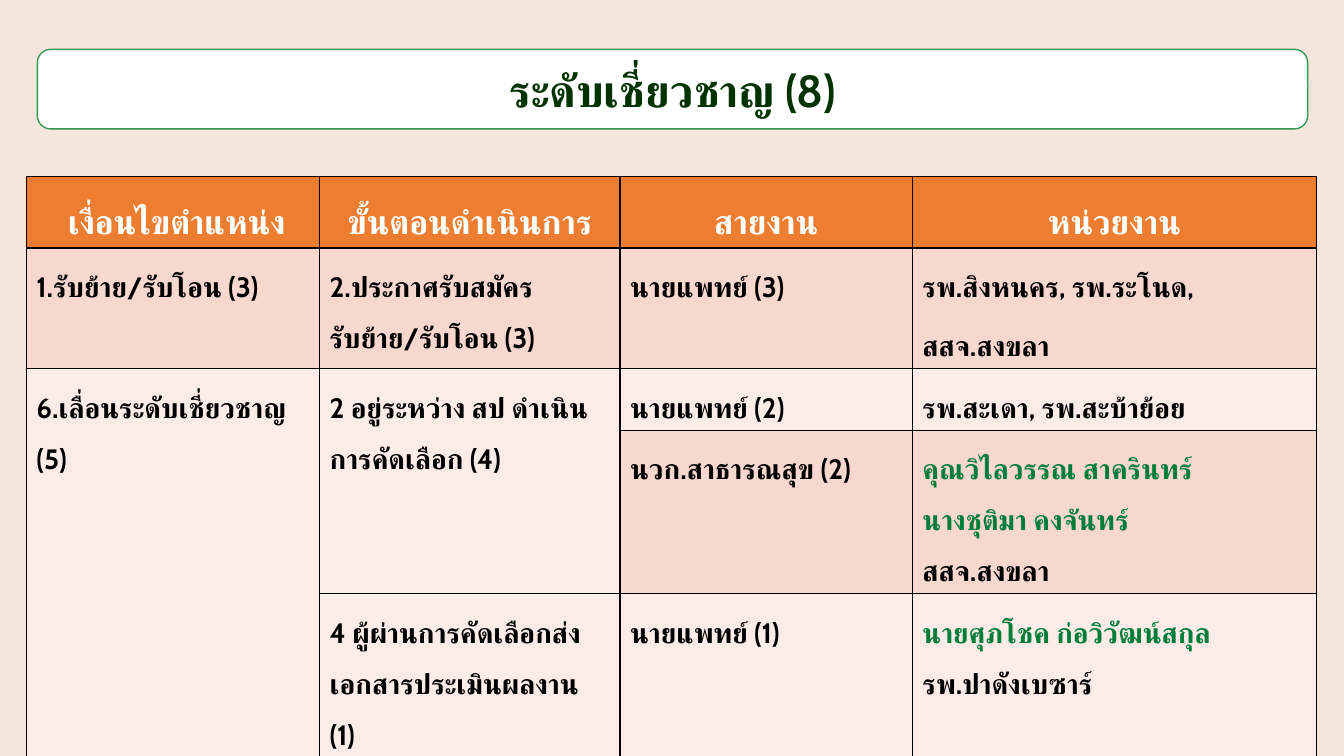
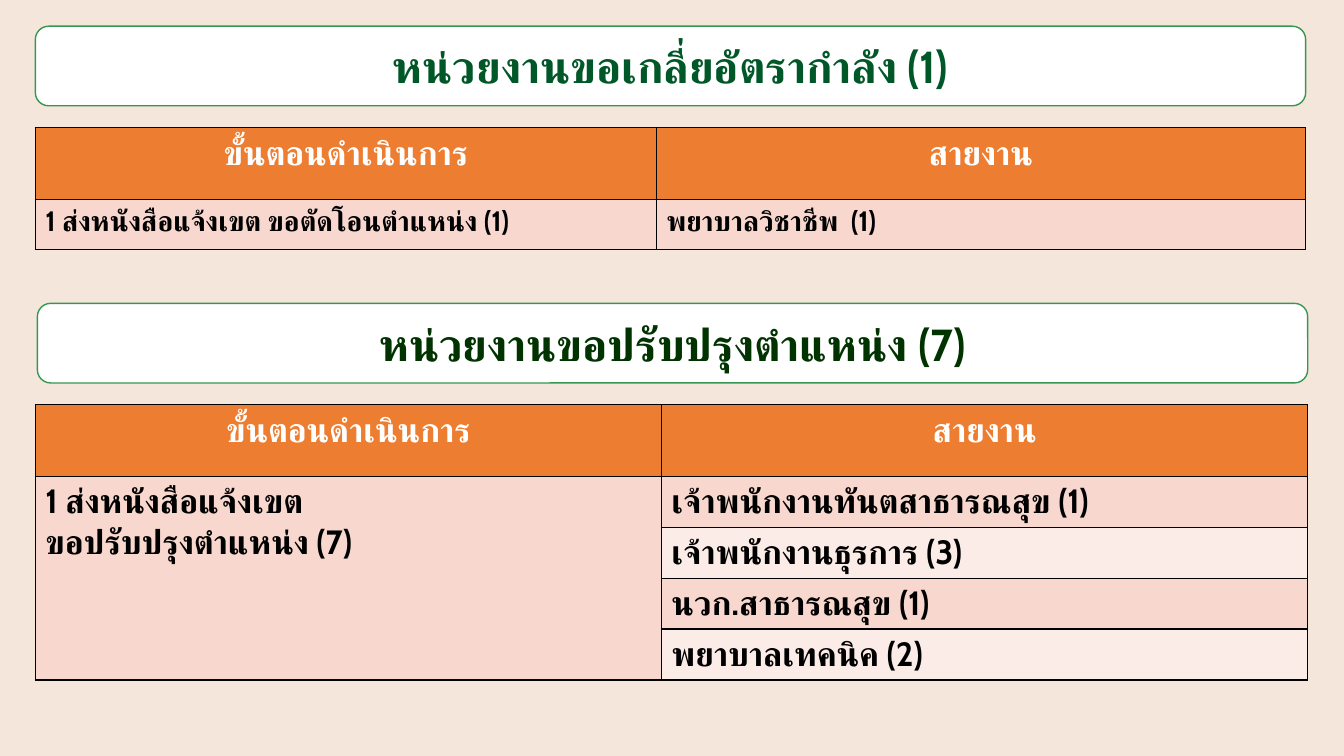
from collections import namedtuple

from lxml import etree
from pptx import Presentation
from pptx import util as u
from pptx.dml.color import RGBColor
from pptx.enum import shapes, text
from pptx.oxml import ns

Box = namedtuple("Box", "left top width height")
TableStyle = namedtuple("TableStyle", "body_size line_spacing space_before")

WIDTH, HEIGHT = u.Inches(13.33), u.Inches(7.5)
FONT = "Cabin"
SAND, WHITE, BLACK = "F5E6DB", "FFFFFF", "000000"
ORANGE, BANDS = "ED7D31", ("FCECE8", "F8D7CE")
OUTLINE, FOREST, PINE, NAME_GREEN = "359751", "003300", "005828", "007E39"
TITLE_SIZE, HEADER_SIZE = 32, 24
BANNER_WIDTH, BANNER_HEIGHT = 94.52, 10.53
CENTRE = text.PP_ALIGN.CENTER


def rgb(value):
    return RGBColor.from_string(value)


def place(box):
    return (round(WIDTH * box.left / 100), round(HEIGHT * box.top / 100),
            round(WIDTH * box.width / 100), round(HEIGHT * box.height / 100))


def write(para, content, size, colour):
    for index, line in enumerate(content.split("\n")):
        if index:
            para.add_line_break()
        if line:
            span = para.add_run()
            span.text = line
            span.font.name = FONT
            span.font.size = u.Pt(size)
            span.font.bold = True
            span.font.color.rgb = rgb(colour)
            complex_font = etree.SubElement(span.font._element, ns.qn("a:cs"))
            complex_font.set("typeface", FONT)


def add_borders(cell):
    properties = cell._tc.get_or_add_tcPr()
    for side in ("lnL", "lnR", "lnT", "lnB"):
        line = etree.SubElement(properties, ns.qn(f"a:{side}"), w=str(u.Pt(1)))
        fill = etree.SubElement(line, ns.qn("a:solidFill"))
        etree.SubElement(fill, ns.qn("a:srgbClr"), val=BLACK)


def add_banner(page, left, top, title, colour):
    box = Box(left, top, BANNER_WIDTH, BANNER_HEIGHT)
    banner = page.shapes.add_shape(shapes.MSO_SHAPE.ROUNDED_RECTANGLE, *place(box))
    banner.shadow.inherit = False
    banner.fill.solid()
    banner.fill.fore_color.rgb = rgb(WHITE)
    banner.line.color.rgb = rgb(OUTLINE)
    banner.line.width = u.Pt(1)
    frame = banner.text_frame
    frame.word_wrap = True
    frame.vertical_anchor = text.MSO_ANCHOR.MIDDLE
    frame.margin_left = frame.margin_right = u.Inches(0.2)
    frame.margin_top = frame.margin_bottom = u.Inches(0.2)
    para = frame.paragraphs[0]
    para.alignment = CENTRE
    write(para, title, TITLE_SIZE, colour)


def fill_cell(cell, paragraphs, is_header, style):
    frame = cell.text_frame
    for index, parts in enumerate(paragraphs):
        para = frame.add_paragraph() if index else frame.paragraphs[0]
        para.line_spacing = style.line_spacing
        if is_header:
            para.alignment = CENTRE
        else:
            para.space_before = u.Pt(style.space_before)
        for content, colour in parts:
            write(para, content, HEADER_SIZE if is_header else style.body_size,
                  WHITE if is_header else colour)


def as_paragraphs(content):
    if isinstance(content, str):
        return [[(line, BLACK)] for line in content.split("\r")]
    return [content]


def add_grid(page, box, columns, heights, rows, style):
    left, top, width, height = place(box)
    grid = page.shapes.add_table(len(rows), len(columns), left, top, width, height).table
    for column, share in zip(grid.columns, columns):
        column.width = round(width * share / sum(columns))
    for row, share in zip(grid.rows, heights):
        row.height = round(height * share / sum(heights))
    for column in range(len(columns)):
        origin = 0
        for index, row in enumerate(rows):
            cell = grid.cell(index, column)
            content = row[column]
            if content is not None:
                origin = index
                fill_cell(cell, as_paragraphs(content), index == 0, style)
            add_borders(cell)
            cell.fill.solid()
            cell.fill.fore_color.rgb = rgb(BANDS[origin % 2] if origin else ORANGE)
            is_last = index + 1 == len(rows) or rows[index + 1][column] is not None
            if is_last and origin < index:
                grid.cell(origin, column).merge(cell)


def build_expert_page(page):
    rows = [
        [" เงื่อนไขตำแหน่ง", "ขั้นตอนดำเนินการ", "สายงาน", "หน่วยงาน"],
        ["1.รับย้าย/รับโอน (3)", "2.ประกาศรับสมัคร \nรับย้าย/รับโอน (3)",
         "นายแพทย์ (3)", "รพ.สิงหนคร, รพ.ระโนด,\rสสจ.สงขลา"],
        ["6.เลื่อนระดับเชี่ยวชาญ (5)", "2 อยู่ระหว่าง สป ดำเนินการคัดเลือก (4)",
         "นายแพทย์ (2)", "รพ.สะเดา, รพ.สะบ้าย้อย"],
        [None, None, "นวก.สาธารณสุข (2)",
         [("คุณวิไลวรรณ สาครินทร์\nนางชุติมา คงจันทร์ \n", NAME_GREEN), ("สสจ.สงขลา", BLACK)]],
        [None, "4 ผู้ผ่านการคัดเลือกส่งเอกสารประเมินผลงาน (1)", "นายแพทย์ (1)",
         [("นายศุภโชค ก่อวิวัฒน์สกุล\n", NAME_GREEN), ("รพ.ปาดังเบซาร์", BLACK)]],
    ]
    add_grid(page, Box(1.95, 23.33, 96.02, 75.87), (291, 298, 290, 401),
             (71, 118, 60, 160, 160), rows, TableStyle(20, 1.5, 6))
    add_banner(page, 2.78, 6.53, "ระดับเชี่ยวชาญ (8)", FOREST)


def build_requests_page(page):
    header = ["ขั้นตอนดำเนินการ", "สายงาน"]
    transfer = [header, ["1 ส่งหนังสือแจ้งเขต ขอตัดโอนตำแหน่ง (1)", "พยาบาลวิชาชีพ  (1)"]]
    upgrade = [
        header,
        ["1 ส่งหนังสือแจ้งเขต \nขอปรับปรุงตำแหน่ง (7)", "เจ้าพนักงานทันตสาธารณสุข (1)"],
        [None, "เจ้าพนักงานธุรการ (3)"],
        [None, "นวก.สาธารณสุข (1)"],
        [None, "พยาบาลเทคนิค (2)"],
    ]
    add_banner(page, 2.63, 3.47, "หน่วยงานขอเกลี่ยอัตรากำลัง (1)", PINE)
    add_grid(page, Box(2.63, 16.87, 94.52, 16.13), (616, 644), (71, 50),
             transfer, TableStyle(20, 1.0, 0))
    add_banner(page, 2.78, 40.13, "หน่วยงานขอปรับปรุงตำแหน่ง (7)", FOREST)
    add_grid(page, Box(2.63, 53.53, 94.67, 36.13), (621, 641), (71, 50, 50, 50, 50),
             upgrade, TableStyle(24, 1.0, 0))


def main():
    deck = Presentation()
    deck.slide_width, deck.slide_height = WIDTH, HEIGHT
    backdrop = deck.slide_master.background.fill
    backdrop.solid()
    backdrop.fore_color.rgb = rgb(SAND)
    for build in (build_expert_page, build_requests_page):
        build(deck.slides.add_slide(deck.slide_layouts[6]))
    deck.save("out.pptx")


if __name__ == "__main__":
    main()
